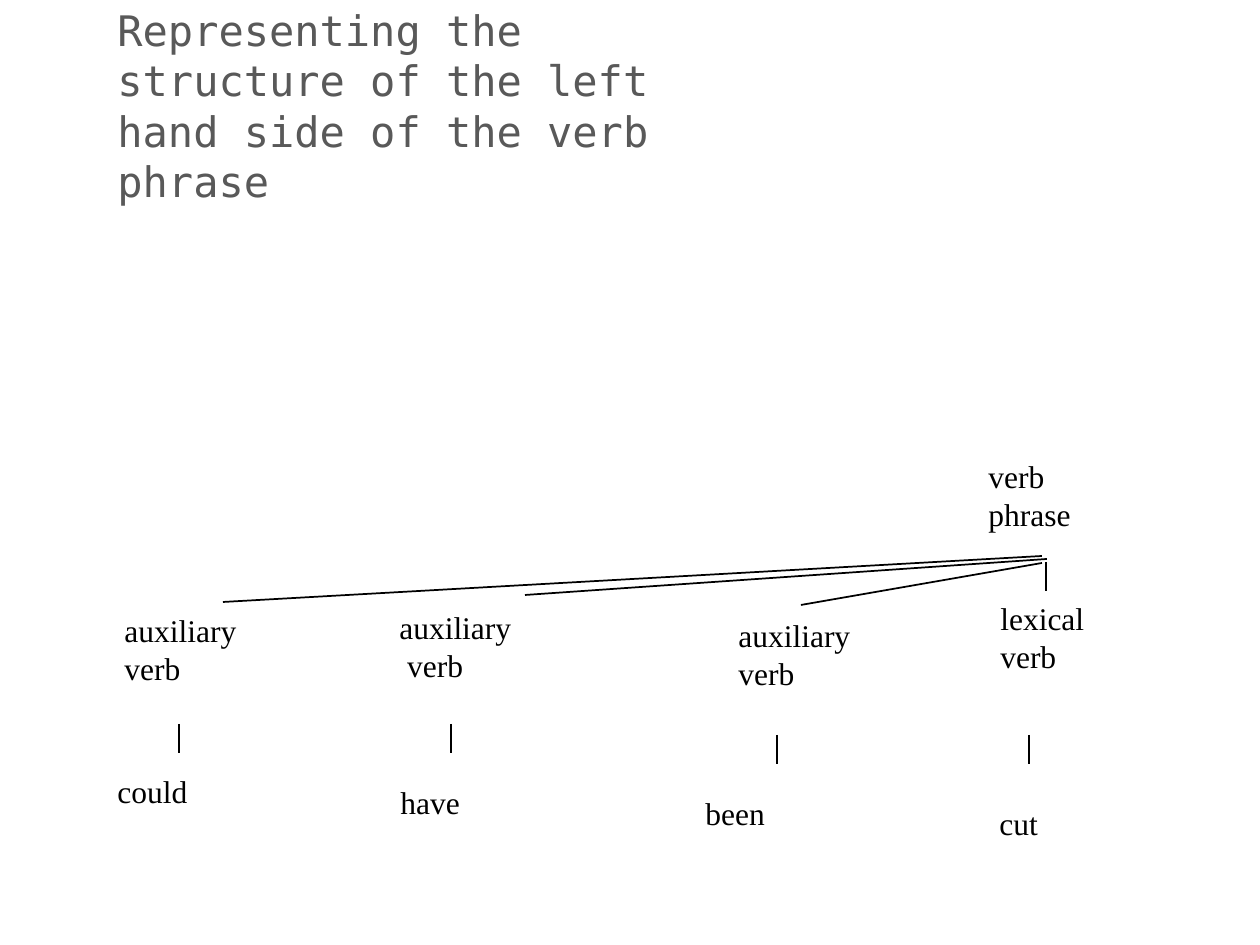
"""Draw a verb phrase tree with its auxiliary and lexical verbs."""
from dataclasses import dataclass

from lxml import etree
from pptx import Presentation
from pptx import util as u
from pptx.dml.color import RGBColor
from pptx.enum import shapes, text

PX = u.Inches(1) // 126
BLACK = RGBColor(0x00, 0x00, 0x00)
GRAY = RGBColor(0x59, 0x59, 0x59)
WHITE = RGBColor(0xFF, 0xFF, 0xFF)
NS = "http://schemas.openxmlformats.org/drawingml/2006/main"
HEAD = {"name": "DejaVu Sans Mono", "size": u.Pt(24)}
BODY = {"name": "Times New Roman", "size": u.Pt(18)}
STEM = 29


@dataclass(frozen=True)
class Label:
    words: str
    x: int
    y: int
    w: int
    h: int
    wrap: bool = False


@dataclass(frozen=True)
class Line:
    x: int
    y: int
    to_x: int
    to_y: int


TITLE = Label("Representing the structure of the left hand side of the verb phrase",
              105, 0, 588, 210, True)
LABELS = (
    Label("could", 105, 766, 118, 63),
    Label("have", 388, 777, 105, 63),
    Label("been", 693, 788, 105, 63),
    Label("cut", 987, 798, 77, 63),
    Label("auxiliary\nverb", 726, 610, 296, 113, True),
    Label("lexical\nverb", 988, 593, 147, 113),
    Label("verb\nphrase", 976, 451, 209, 113, True),
    Label("auxiliary\n verb", 387, 602, 174, 113),
    Label("auxiliary\nverb", 112, 605, 307, 113, True),
)
STEMS = ((1046, 562), (451, 724), (777, 735), (1029, 735), (179, 724))
BRANCHES = (
    Line(1042, 556, 223, 602),
    Line(1047, 559, 525, 595),
    Line(1042, 563, 801, 605),
)


def write(tree, label: Label, style: dict, color: RGBColor, anchor) -> None:
    box = tree.add_textbox(*(n * PX for n in (label.x, label.y, label.w, label.h)))
    frame = box.text_frame
    frame.text = label.words
    frame.word_wrap = label.wrap
    frame.vertical_anchor = anchor
    for para in frame.paragraphs:
        para.line_spacing = 1.0
        for run in para.runs:
            for key, value in style.items():
                setattr(run.font, key, value)
            run.font.color.rgb = color


def join(tree, line: Line) -> None:
    ends = (n * PX for n in (line.x, line.y, line.to_x, line.to_y))
    edge = tree.add_connector(shapes.MSO_CONNECTOR.STRAIGHT, *ends)
    edge.line.color.rgb = BLACK
    edge.line.width = u.Pt(1)
    etree.SubElement(edge._element.spPr, f"{{{NS}}}effectLst")


def main() -> None:
    deck = Presentation()
    deck.slide_width, deck.slide_height = 1260 * PX, 945 * PX
    slide = deck.slides.add_slide(deck.slide_layouts[6])
    fill = slide.background.fill
    fill.solid()
    fill.fore_color.rgb = WHITE
    tree = slide.shapes
    write(tree, TITLE, HEAD, GRAY, text.MSO_ANCHOR.MIDDLE)
    for label in LABELS:
        write(tree, label, BODY, BLACK, text.MSO_ANCHOR.TOP)
    for x, y in STEMS:
        join(tree, Line(x, y, x, y + STEM))
    for line in BRANCHES:
        join(tree, line)
    deck.save("out.pptx")


if __name__ == "__main__":
    main()
